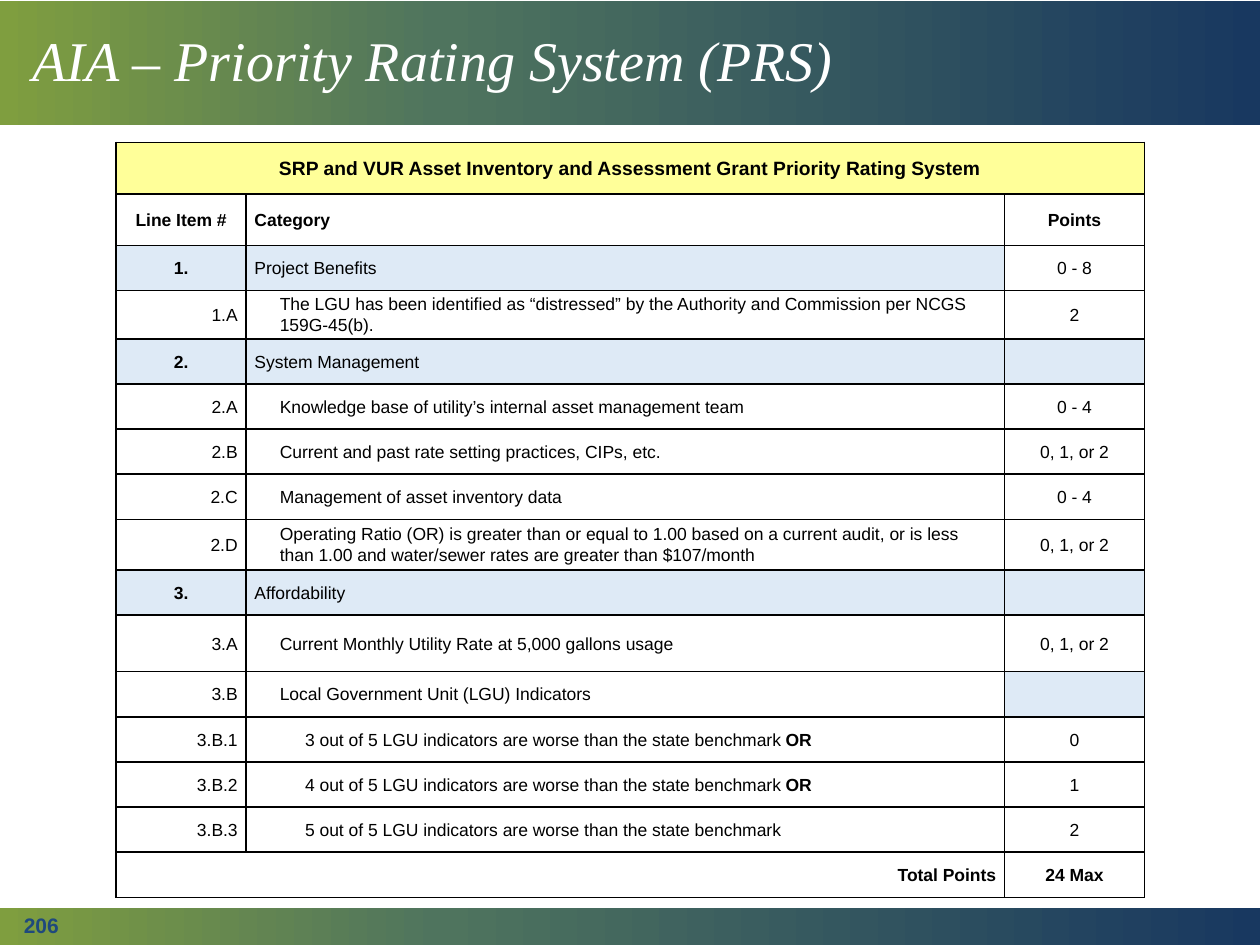
from copy import deepcopy
from dataclasses import dataclass

from lxml import etree
from pptx import Presentation
from pptx import util as u
from pptx.dml.color import RGBColor
from pptx.enum import shapes, text
from pptx.oxml import ns

LEFT, CENTER, RIGHT = text.PP_ALIGN.LEFT, text.PP_ALIGN.CENTER, text.PP_ALIGN.RIGHT


@dataclass(frozen=True)
class Theme:
    band: tuple = ((0, "7F9E3F"), (0.35, "4F745E"), (1, "183860"))
    heading_fill: str = "FFFF99"
    section_fill: str = "DEEAF6"
    plain_fill: str = "FFFFFF"
    ink: str = "000000"
    title_ink: str = "FFFFFF"
    number_ink: str = "1F497D"
    title_font: str = "Times New Roman"
    body_font: str = "Arial"
    title_size: int = 32
    number_size: int = 12
    heading_size: int = 11
    body_size: int = 10
    border: int = 1


THEME = Theme()

HEADING = "SRP and VUR Asset Inventory and Assessment Grant Priority Rating System"
COLUMN_HEADS = ("Line Item #", "Category", "Points")
# Line item, category, points; "*" precedes a bold ending
CRITERIA = (
    ("1.", "Project Benefits", "0 - 8"),
    ("1.A", "The LGU has been identified as “distressed” by the Authority and "
            "Commission per NCGS 159G-45(b).", "2"),
    ("2.", "System Management", ""),
    ("2.A", "Knowledge base of utility’s internal asset management team", "0 - 4"),
    ("2.B", "Current and past rate setting practices, CIPs, etc.", "0, 1, or 2"),
    ("2.C", "Management of asset inventory data", "0 - 4"),
    ("2.D", "Operating Ratio (OR) is greater than or equal to 1.00 based on a current "
            "audit, or is less than 1.00 and water/sewer rates are greater than "
            "$107/month", "0, 1, or 2"),
    ("3.", "Affordability", ""),
    ("3.A", "Current Monthly Utility Rate at 5,000 gallons usage", "0, 1, or 2"),
    ("3.B", "Local Government Unit (LGU) Indicators", ""),
    ("3.B.1", "3 out of 5 LGU indicators are worse than the state benchmark *OR", "0"),
    ("3.B.2", "4 out of 5 LGU indicators are worse than the state benchmark *OR", "1"),
    ("3.B.3", "5 out of 5 LGU indicators are worse than the state benchmark", "2"),
)
TOTAL = ("Total Points", "24 Max")

COLUMN_WIDTHS = (2.62, 15.29, 2.82)
ROW_HEIGHT = 0.91
TALL_ROWS = {0: 1.04, 1: 1.04, 3: 0.97, 8: 1.02, 10: 1.14}
INDENT = 0.51


def style_font(font, name, size, color, bold=False, italic=False):
    font.name, font.size = name, u.Pt(size)
    font.bold, font.italic = bold, italic
    font.color.rgb = RGBColor.from_string(color)


def add_band(slide, top, height):
    """Full-width bar with the three-colour gradient."""
    band = slide.shapes.add_shape(shapes.MSO_SHAPE.RECTANGLE, 0, u.Cm(top),
                                  u.Cm(25.4), u.Cm(height))
    band.shadow.inherit = False
    band.line.fill.background()
    band.fill.gradient()
    band.fill.gradient_angle = 0
    stop_list = band.fill._fill._gradFill.gsLst
    stop_list.append(deepcopy(stop_list[-1]))
    for stop, (position, color) in zip(band.fill.gradient_stops, THEME.band):
        stop.position = position
        stop.color.rgb = RGBColor.from_string(color)


def add_label(slide, wording, left, top, width, height, spacing=1.0, **font):
    frame = slide.shapes.add_textbox(*map(u.Cm, (left, top, width, height))).text_frame
    frame.word_wrap = True
    frame.margin_top = frame.margin_bottom = 0
    frame.vertical_anchor = text.MSO_ANCHOR.MIDDLE
    line = frame.paragraphs[0]
    line.text = wording
    line.line_spacing = spacing
    style_font(line.font, **font)


def draw_borders(cell):
    properties = cell._tc.get_or_add_tcPr()
    for side in ("lnL", "lnR", "lnT", "lnB"):
        edge = etree.SubElement(properties, ns.qn(f"a:{side}"),
                                w=str(u.Pt(THEME.border)))
        paint = etree.SubElement(edge, ns.qn("a:solidFill"))
        etree.SubElement(paint, ns.qn("a:srgbClr"), val=THEME.ink)


def fill_cell(cell, wording, align, fill=THEME.plain_fill, bold=False,
              size=THEME.body_size, level=0):
    cell.fill.solid()
    cell.fill.fore_color.rgb = RGBColor.from_string(fill)
    cell.vertical_anchor = text.MSO_ANCHOR.MIDDLE
    cell.margin_left = cell.margin_right = u.Cm(0.17)
    cell.margin_top = cell.margin_bottom = 0
    line = cell.text_frame.paragraphs[0]
    line.alignment, line.line_spacing = align, 1.07
    if level:
        line._p.get_or_add_pPr().set("marL", str(u.Cm(INDENT * level)))
    style_font(line.font, THEME.body_font, size, THEME.ink, bold)
    plain, _, strong = wording.partition("*")
    if plain:
        line.add_run().text = plain
    if strong:
        ending = line.add_run()
        ending.text = strong
        ending.font.bold = True


def add_rating_table(slide):
    row_count = len(CRITERIA) + 3
    heights = [TALL_ROWS.get(i, ROW_HEIGHT) for i in range(row_count)]
    rating = slide.shapes.add_table(
        row_count, len(COLUMN_WIDTHS), u.Cm(2.34), u.Cm(2.87),
        u.Cm(sum(COLUMN_WIDTHS)), u.Cm(sum(heights))).table
    rating.first_row = rating.horz_banding = False
    for column, width in zip(rating.columns, COLUMN_WIDTHS):
        column.width = u.Cm(width)
    for row, height in zip(rating.rows, heights):
        row.height = u.Cm(height)
    for cell in rating.iter_cells():
        draw_borders(cell)

    # Heading and column heads
    rating.cell(0, 0).merge(rating.cell(0, 2))
    fill_cell(rating.cell(0, 0), HEADING, CENTER, THEME.heading_fill, True,
              THEME.heading_size)
    for col, (head, align) in enumerate(zip(COLUMN_HEADS, (CENTER, LEFT, CENTER))):
        fill_cell(rating.cell(1, col), head, align, bold=True)

    # Sections and their criteria
    for row, (item, category, points) in enumerate(CRITERIA, start=2):
        is_section = item.endswith(".")
        level = 0 if is_section else item.count(".")
        fill = THEME.section_fill if is_section else THEME.plain_fill
        points_fill = THEME.plain_fill if points else THEME.section_fill
        fill_cell(rating.cell(row, 0), item, CENTER if is_section else RIGHT,
                  fill, is_section)
        fill_cell(rating.cell(row, 1), category, LEFT, fill, level=level)
        fill_cell(rating.cell(row, 2), points, CENTER, points_fill)

    # Total
    last = row_count - 1
    rating.cell(last, 0).merge(rating.cell(last, 1))
    fill_cell(rating.cell(last, 0), TOTAL[0], RIGHT, bold=True)
    fill_cell(rating.cell(last, 2), TOTAL[1], CENTER, bold=True)


def main():
    deck = Presentation()
    deck.slide_width, deck.slide_height = u.Cm(25.4), u.Cm(19.05)
    slide = deck.slides.add_slide(deck.slide_layouts[6])

    # Footer and title bands
    add_band(slide, 18.31, 0.76)
    add_band(slide, 0.03, 2.49)
    add_label(slide, "AIA – Priority Rating System (PRS)", 0.41, 0.03, 24.61, 2.49,
              spacing=0.9, name=THEME.title_font, size=THEME.title_size,
              color=THEME.title_ink, italic=True)
    add_label(slide, "206", 0.23, 18.47, 5.72, 0.38, name=THEME.body_font,
              size=THEME.number_size, color=THEME.number_ink, bold=True)

    add_rating_table(slide)
    deck.save("out.pptx")


if __name__ == "__main__":
    main()
